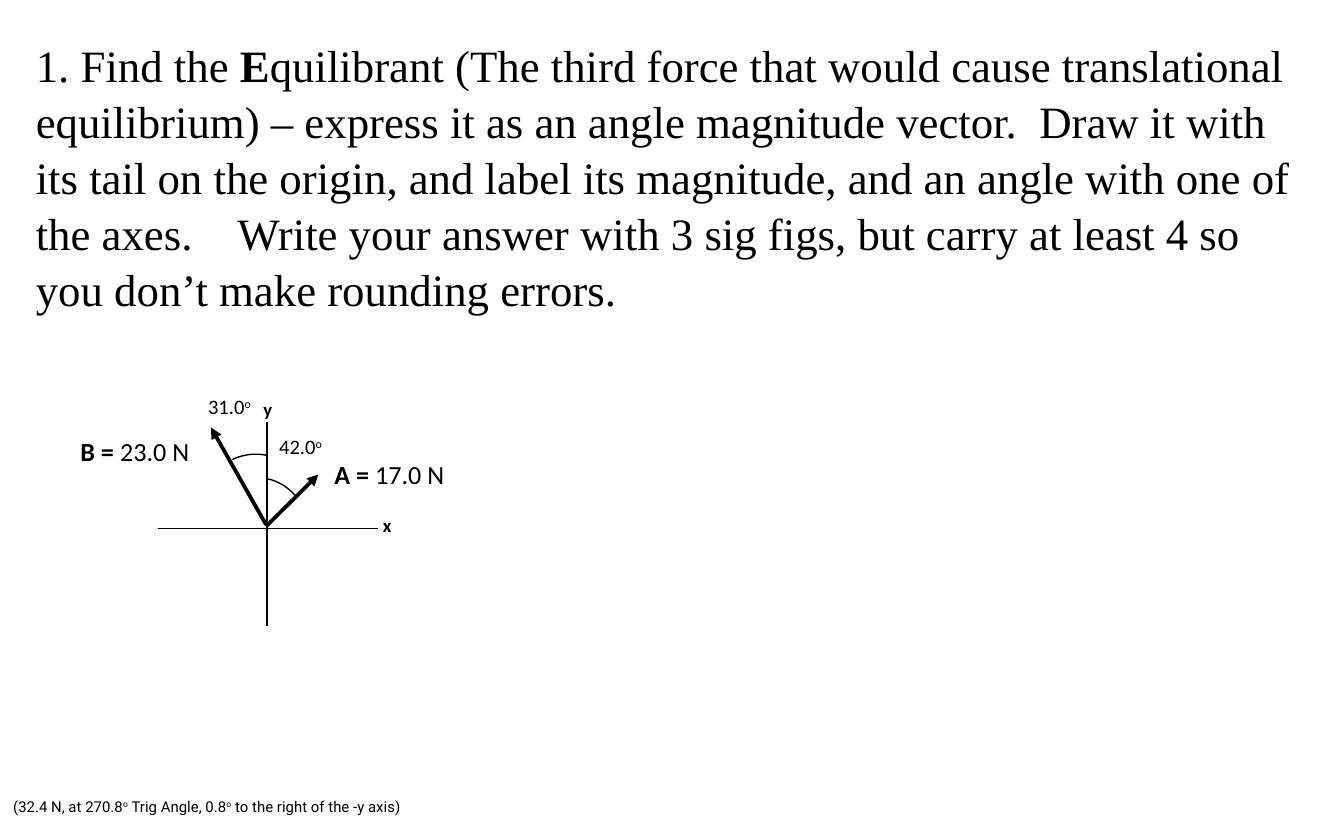
from dataclasses import dataclass

from lxml import etree
from pptx import Presentation
from pptx.dml.color import RGBColor
from pptx.enum.shapes import MSO_CONNECTOR
from pptx.enum.text import MSO_ANCHOR, MSO_AUTO_SIZE, PP_ALIGN
from pptx.oxml.ns import qn
from pptx.util import Pt

STRAIGHT = MSO_CONNECTOR.STRAIGHT
TOP, MIDDLE = MSO_ANCHOR.TOP, MSO_ANCHOR.MIDDLE
LEFT = PP_ALIGN.LEFT
FIT = MSO_AUTO_SIZE.SHAPE_TO_FIT_TEXT
INK = "000000"
STEPS = 24

Point = tuple[float, float]
Runs = list[tuple[str, str]]  # text and style: "" plain, "b" bold, "o" raised


@dataclass
class Label:
    box: tuple[float, float, float, float]
    runs: Runs
    size: float
    font: str = "Calibri"
    anchor: MSO_ANCHOR = TOP


@dataclass
class Line:
    start: Point
    end: Point
    width: float = 0.75
    arrow: bool = False


@dataclass
class Arc:
    curve: tuple[Point, Point, Point, Point]  # cubic control points


def color(code: str) -> RGBColor:
    return RGBColor.from_string(code)


def style(obj, form: dict) -> None:
    for name, value in form.items():
        setattr(obj, name, value)


def place(shape, box) -> None:
    style(shape, dict(zip(("left", "top", "width", "height"), map(Pt, box))))


def write(frame, runs: Runs, size: float, font: str) -> None:
    para = frame.paragraphs[0]
    para.alignment = LEFT
    for text, kind in runs:
        run = para.add_run()
        run.text = text
        style(run.font, {"name": font, "size": Pt(size), "bold": kind == "b"})
        run.font.color.rgb = color(INK)
        if kind == "o":
            run._r.get_or_add_rPr().set("baseline", "30000")


def draw_label(slide, item: Label) -> None:
    frame = slide.shapes.add_textbox(*map(Pt, item.box)).text_frame
    style(frame, {"word_wrap": True, "vertical_anchor": item.anchor})
    write(frame, item.runs, item.size, item.font)


def draw_line(slide, item: Line) -> None:
    line = slide.shapes.add_connector(STRAIGHT, *map(Pt, item.start + item.end))
    line.line.color.rgb = color(INK)
    line.line.width = Pt(item.width)
    if item.arrow:
        etree.SubElement(line.line._get_or_add_ln(), qn("a:tailEnd"), type="triangle")
    etree.SubElement(line._element.spPr, qn("a:effectLst"))


def draw_arc(slide, item: Arc) -> None:
    def spot(t: float) -> Point:
        parts = ((1 - t) ** 3, 3 * t * (1 - t) ** 2, 3 * t * t * (1 - t), t ** 3)
        x, y = (sum(w * p[i] for w, p in zip(parts, item.curve)) for i in (0, 1))
        return Pt(x), Pt(y)

    pen = slide.shapes.build_freeform(*spot(0))
    pen.add_line_segments([spot(n / STEPS) for n in range(1, STEPS + 1)], close=False)
    shape = pen.convert_to_shape()
    shape.shadow.inherit = False
    shape.fill.background()
    shape.line.color.rgb = color(INK)
    shape.line.width = Pt(0.75)


TASK = [
    ("1. Find the ", ""), ("E", "b"),
    ("quilibrant (The third force that would cause translational equilibrium) – "
     "express it as an angle magnitude vector.  Draw it with its tail on the origin, "
     "and label its magnitude, and an angle with one of the axes.\tWrite your answer "
     "with 3 sig figs, but carry at least 4 so you don’t make rounding errors.", ""),
]
ANSWER = [
    ("(32.4 N, at 270.8", ""), ("o", "o"), (" Trig Angle, 0.8", ""), ("o", "o"),
    (" to the right of the -y axis)", ""),
]
LINES = [
    Line((142.5, 282), (170.6, 254.2), 2, True),  # vector A
    Line((142.5, 281), (113, 229), 2, True),  # vector B
    Line((84.5, 283), (202.5, 283)),  # x axis
    Line((143, 226), (143, 335.5)),  # y axis
]
ARCS = [
    Arc(((158.4, 265.7), (154.8, 261.4), (149, 257.5), (143, 256.5))),
    Arc(((143, 244), (136.8, 242.6), (130.3, 243.4), (124.5, 246.2))),
]
LABELS = [
    Label((172, 242, 79, 24), [("A = ", "b"), ("17.0 N", "")], 14),
    Label((36, 229.7, 79, 24), [("B = ", "b"), ("23.0 N", "")], 14),
    Label((142.5, 229, 44, 21), [("42.0", ""), ("o", "o")], 11),
    Label((104.4, 207.4, 53, 21), [("31.0", ""), ("o", "o")], 11),
    Label((198, 271.5, 21, 24), [("x", "b")], 10),
    Label((134, 209.5, 21, 24), [("y", "b")], 10),
    Label((0, 414, 720, 36), ANSWER, 8, "Roboto", MIDDLE),
]


def main() -> None:
    deck = Presentation()
    style(deck, {"slide_width": Pt(720), "slide_height": Pt(450)})
    slide = deck.slides.add_slide(deck.slide_layouts[5])

    # Problem text, with a tab stop for the gap before its last sentence
    title = slide.shapes.title
    place(title, (12, 15.5, 696, 152.5))
    frame = title.text_frame
    style(frame, {"word_wrap": True, "vertical_anchor": TOP, "auto_size": FIT})
    para = frame.paragraphs[0]
    para.line_spacing = 1.04
    tabs = etree.SubElement(para._p.get_or_add_pPr(), qn("a:tabLst"))
    etree.SubElement(tabs, qn("a:tab"), pos=str(Pt(108)), algn="l")
    write(frame, TASK, 24, "Times New Roman")

    # Force diagram and answer
    for line in LINES:
        draw_line(slide, line)
    for arc in ARCS:
        draw_arc(slide, arc)
    for label in LABELS:
        draw_label(slide, label)

    deck.save("out.pptx")


if __name__ == "__main__":
    main()
